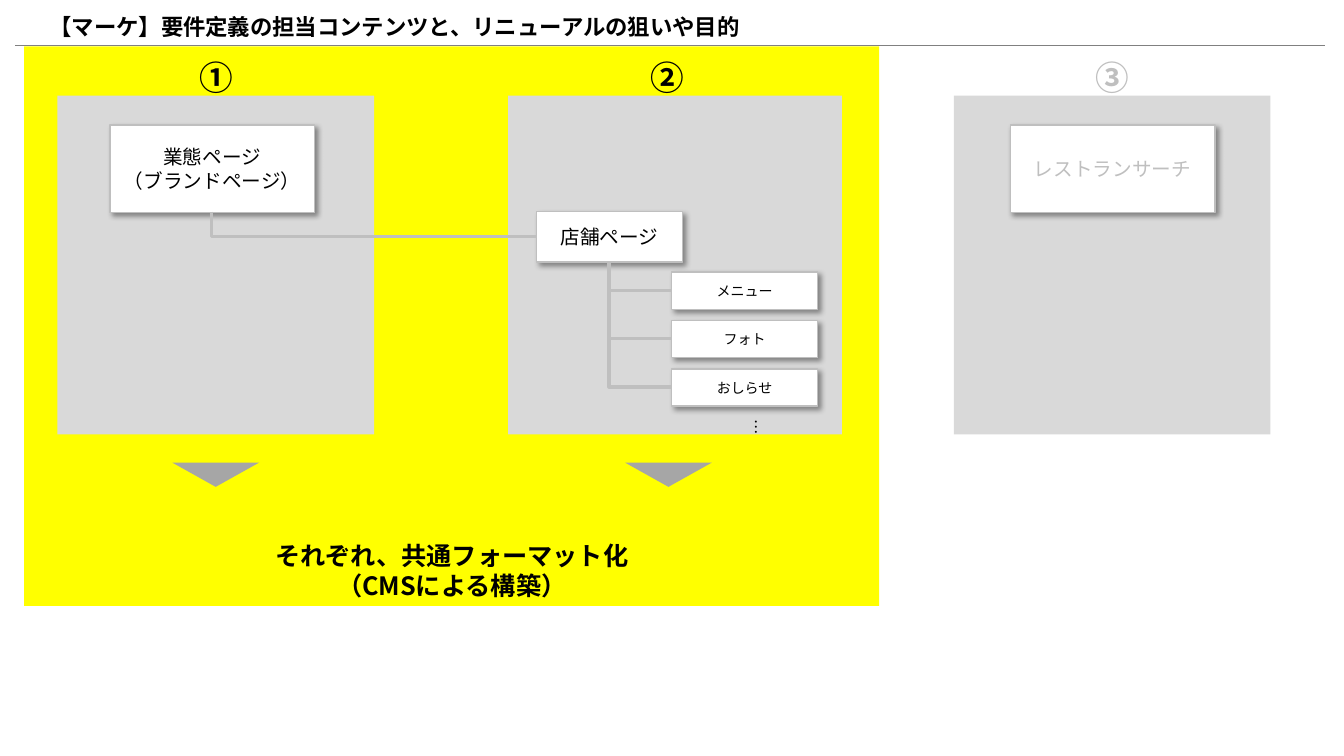
import lxml.etree
import pptx
import pptx.dml.color
import pptx.enum.shapes
import pptx.enum.text
import pptx.oxml
import pptx.oxml.ns
import pptx.util

RGBColor = pptx.dml.color.RGBColor
SHAPE = pptx.enum.shapes.MSO_SHAPE
CONNECTOR = pptx.enum.shapes.MSO_CONNECTOR
ALIGN = pptx.enum.text.PP_ALIGN
ANCHOR = pptx.enum.text.MSO_ANCHOR
qn = pptx.oxml.ns.qn

BLACK = RGBColor(0x00, 0x00, 0x00)
WHITE = RGBColor(0xFF, 0xFF, 0xFF)
YELLOW = RGBColor(0xFF, 0xFF, 0x00)
PANEL = RGBColor(0xD9, 0xD9, 0xD9)
PALE = RGBColor(0xBF, 0xBF, 0xBF)
ARROW = RGBColor(0xA6, 0xA6, 0xA6)
RULE = RGBColor(0x80, 0x80, 0x80)

PX = 9144  # EMU, 100 px to the inch
FONT = "Noto Sans CJK JP"
CARD_SHADOW = (
    '<a:effectLst xmlns:a="http://schemas.openxmlformats.org/drawingml/2006/main">'
    '<a:outerShdw blurRad="50800" dist="38100" dir="2700000" algn="tl" rotWithShape="0">'
    '<a:srgbClr val="000000"><a:alpha val="40000"/></a:srgbClr>'
    '</a:outerShdw></a:effectLst>'
)


def write(tf, text, size=14, color=BLACK, bold=False, align=ALIGN.CENTER,
          anchor=ANCHOR.MIDDLE, wrap=True):
    """Fill a text frame, one paragraph for each line of text."""
    tf.word_wrap = wrap
    tf.auto_size = pptx.enum.text.MSO_AUTO_SIZE.NONE
    tf.vertical_anchor = anchor
    for i, line in enumerate(text.split("\n")):
        p = tf.paragraphs[0] if i == 0 else tf.add_paragraph()
        p.alignment = align
        r = p.add_run()
        r.text = line
        r.font.size = pptx.util.Pt(size)
        r.font.bold = bold
        r.font.color.rgb = color
        r.font.name = FONT
        ea = lxml.etree.SubElement(r.font._element, qn("a:ea"))
        ea.set("typeface", FONT)


class Board:
    def __init__(self, slide):
        self.s = slide

    def title(self, text, x, y, w, h):
        sp = self.s.shapes.title
        sp.left, sp.top, sp.width, sp.height = (v * PX for v in (x, y, w, h))
        write(sp.text_frame, text, size=16, bold=True, align=ALIGN.LEFT)

    def shape(self, x, y, w, h, fill, kind=SHAPE.RECTANGLE):
        sp = self.s.shapes.add_shape(kind, x * PX, y * PX, w * PX, h * PX)
        sp.shadow.inherit = False
        sp.fill.solid()
        sp.fill.fore_color.rgb = fill
        sp.line.fill.background()
        return sp

    def card(self, text, x, y, w, h, **style):
        """White box with a pale outline and a soft shadow."""
        sp = self.shape(x, y, w, h, WHITE)
        sp.line.color.rgb = PALE
        sp.line.width = pptx.util.Pt(1)
        props = sp._element.spPr
        props.remove(props.find(qn("a:effectLst")))
        props.append(pptx.oxml.parse_xml(CARD_SHADOW))
        write(sp.text_frame, text, **style)

    def label(self, text, x, y, w, h, vertical=False, **style):
        sp = self.s.shapes.add_textbox(x * PX, y * PX, w * PX, h * PX)
        write(sp.text_frame, text, align=ALIGN.LEFT, anchor=ANCHOR.TOP, wrap=False, **style)
        if vertical:
            sp.text_frame._txBody.bodyPr.set("vert", "eaVert")

    def down_arrow(self, x, y, w, h):
        sp = self.shape(x, y, w, h, ARROW, SHAPE.DOWN_ARROW)
        sp.adjustments[0] = 0.5
        sp.adjustments[1] = 1

    def line(self, x1, y1, x2, y2, color, width, kind=CONNECTOR.STRAIGHT):
        c = self.s.shapes.add_connector(kind, *(round(v * PX) for v in (x1, y1, x2, y2)))
        c.line.color.rgb = color
        c.line.width = pptx.util.Pt(width)
        lxml.etree.SubElement(c._element.spPr, qn("a:effectLst"))
        return c

    def branch(self, x1, y1, x2, y2):
        """One-bend connector that runs down, then right."""
        cx, cy = (x1 + x2) / 2, (y1 + y2) / 2
        dx, dy = (x2 - x1) / 2, (y2 - y1) / 2
        # A quarter turn of the mirrored preset puts the bend at lower left.
        c = self.line(cx + dy, cy - dx, cx - dy, cy + dx, PALE, 2.25, CONNECTOR.ELBOW)
        props = c._element.spPr
        props.find(qn("a:xfrm")).set("rot", "16200000")
        props.find(qn("a:prstGeom")).set("prst", "bentConnector2")


def main():
    prs = pptx.Presentation()
    prs.slide_width, prs.slide_height = 1333 * PX, 750 * PX
    board = Board(prs.slides.add_slide(prs.slide_layouts[5]))

    board.title("【マーケ】要件定義の担当コンテンツと、リニューアルの狙いや目的", 39, 8, 749, 37)
    scope = board.shape(24, 46, 848, 555, YELLOW)
    write(scope.text_frame, "それぞれ、共通フォーマット化\n（CMSによる構築）",
          size=18, bold=True, anchor=ANCHOR.BOTTOM)
    board.line(15, 45, 1314, 45, RULE, 0.5)

    panels = [("①", 57, 314, 188, BLACK), ("②", 504, 331, 635, BLACK),
              ("③", 946, 314, 1077, PALE)]
    for number, x, w, number_x, color in panels:
        board.shape(x, 95, w, 336, PANEL)
        board.label(number, number_x, 52, 54, 50, size=24, bold=True, color=color)

    board.card("業態ページ\n（ブランドページ）", 109, 124, 203, 87)
    board.card("レストランサーチ", 1002, 124, 203, 87, color=PALE)
    board.card("店舗ページ", 532, 210, 145, 50)
    board.branch(210, 210, 532, 235)

    for i, name in enumerate(["メニュー", "フォト", "おしらせ"]):
        y = 270 + 48 * i
        board.card(name, 666, y, 145, 37, size=10)
        board.branch(604, 260, 666, y + 18)
    board.label("…", 726, 406, 39, 26, vertical=True, size=11)

    for x in (171, 620):
        board.down_arrow(x, 459, 86, 24)

    prs.save("out.pptx")


if __name__ == "__main__":
    main()
